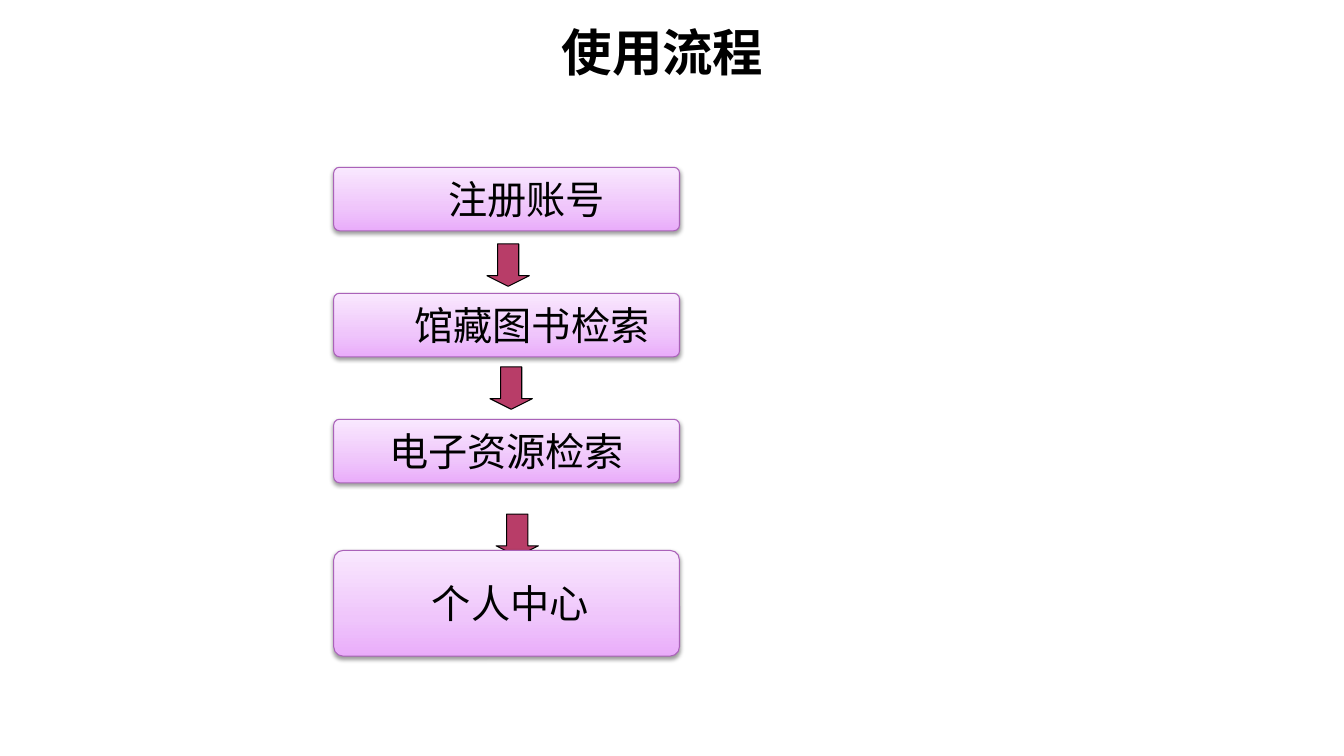
from lxml import etree
from pptx import Presentation
from pptx.dml.color import RGBColor
from pptx.enum.shapes import MSO_SHAPE
from pptx.enum.text import MSO_ANCHOR, MSO_AUTO_SIZE, PP_ALIGN
from pptx.oxml.ns import qn
from pptx.util import Inches, Pt

ROUNDED = MSO_SHAPE.ROUNDED_RECTANGLE
DOWN_ARROW = MSO_SHAPE.DOWN_ARROW
MIDDLE = MSO_ANCHOR.MIDDLE
NO_AUTOFIT = MSO_AUTO_SIZE.NONE
CENTER = PP_ALIGN.CENTER
TITLE_ONLY = 5


def colour(hex_text):
    return RGBColor.from_string(hex_text)


def add_xml(parent, tag, **attributes):
    return etree.SubElement(parent, qn(tag), attributes)


class FlowSlide:
    black = "000000"
    step_border = "AA62B9"
    arrow_fill = "B83D68"
    gradient = [(0, "E9ACFA"), (35, "EFC5FB"), (100, "F9E8FE")]
    title_font = {"name": "Arial", "size": Pt(36), "bold": True}
    step_font = {"name": "Noto Sans CJK SC", "size": Pt(28), "bold": False}

    def __init__(self, presentation):
        layout = presentation.slide_layouts[TITLE_ONLY]
        self.slide = presentation.slides.add_slide(layout)

    def set_text(self, frame, text, font_values, frame_values):
        for name, value in frame_values.items():
            setattr(frame, name, value)
        paragraph = frame.paragraphs[0]
        paragraph.alignment = CENTER
        run = paragraph.add_run()
        run.text = text
        for name, value in font_values.items():
            setattr(run.font, name, value)
        run.font.color.rgb = colour(self.black)
        add_xml(run.font._element, "a:ea", typeface=font_values["name"])

    def title(self, text, left, top, width, height):
        heading = self.slide.shapes.title
        heading.left, heading.top = Inches(left), Inches(top)
        heading.width, heading.height = Inches(width), Inches(height)
        self.set_text(heading.text_frame, text, self.title_font,
                      {"word_wrap": True, "auto_size": NO_AUTOFIT,
                       "vertical_anchor": MIDDLE})

    def block(self, kind, left, top, width, height, border):
        shape = self.slide.shapes.add_shape(
            kind, Inches(left), Inches(top), Inches(width), Inches(height))
        shape.line.color.rgb = colour(border)
        shape.line.width = Pt(0.75)
        shape.shadow.inherit = False
        return shape

    def arrow(self, left, top, size):
        arrow = self.block(DOWN_ARROW, left, top, size, size, self.black)
        arrow.adjustments[1] = 0.25
        arrow.fill.solid()
        arrow.fill.fore_color.rgb = colour(self.arrow_fill)

    def step(self, text, left, top, width, height, inset):
        step = self.block(ROUNDED, left, top, width, height, self.step_border)
        step.adjustments[0] = 0.09
        self.shade(step)
        self.cast_shadow(step)
        self.set_text(step.text_frame, text, self.step_font,
                      {"word_wrap": False, "vertical_anchor": MIDDLE,
                       "margin_left": Inches(inset)})

    def shade(self, shape):
        """Fill with the three-stop gradient, darkest at the bottom."""
        shape.fill.gradient()
        shape.fill.gradient_angle = 90
        stops = shape._element.spPr.find(".//" + qn("a:gsLst"))
        for stop in list(stops):
            stops.remove(stop)
        for position, tint in self.gradient:
            stop = add_xml(stops, "a:gs", pos=str(position * 1000))
            add_xml(stop, "a:srgbClr", val=tint)

    def cast_shadow(self, shape):
        effects = shape._element.spPr.find(qn("a:effectLst"))
        shadow = add_xml(effects, "a:outerShdw", blurRad=str(Pt(3.1)),
                         dist=str(Pt(1.6)), dir="5400000", rotWithShape="0")
        tint = add_xml(shadow, "a:srgbClr", val=self.black)
        add_xml(tint, "a:alpha", val="38000")


def main():
    presentation = Presentation()
    presentation.slide_width = Inches(13.33)
    presentation.slide_height = Inches(7.5)
    flow = FlowSlide(presentation)
    flow.title("使用流程", 1.1, 0.16, 10.94, 0.7)

    for left, top in [(4.83, 2.42), (4.86, 3.64), (4.92, 5.1)]:
        flow.arrow(left, top, 0.42)

    steps = [("注册账号", 1.66, 0.63, 0.5), ("馆藏图书检索", 2.91, 0.63, 0.6),
             ("电子资源检索", 4.16, 0.63, 0.1), ("个人中心", 5.46, 1.05, 0.17)]
    for text, top, height, inset in steps:
        flow.step(text, 3.31, top, 3.43, height, inset)

    presentation.save("out.pptx")


if __name__ == "__main__":
    main()
